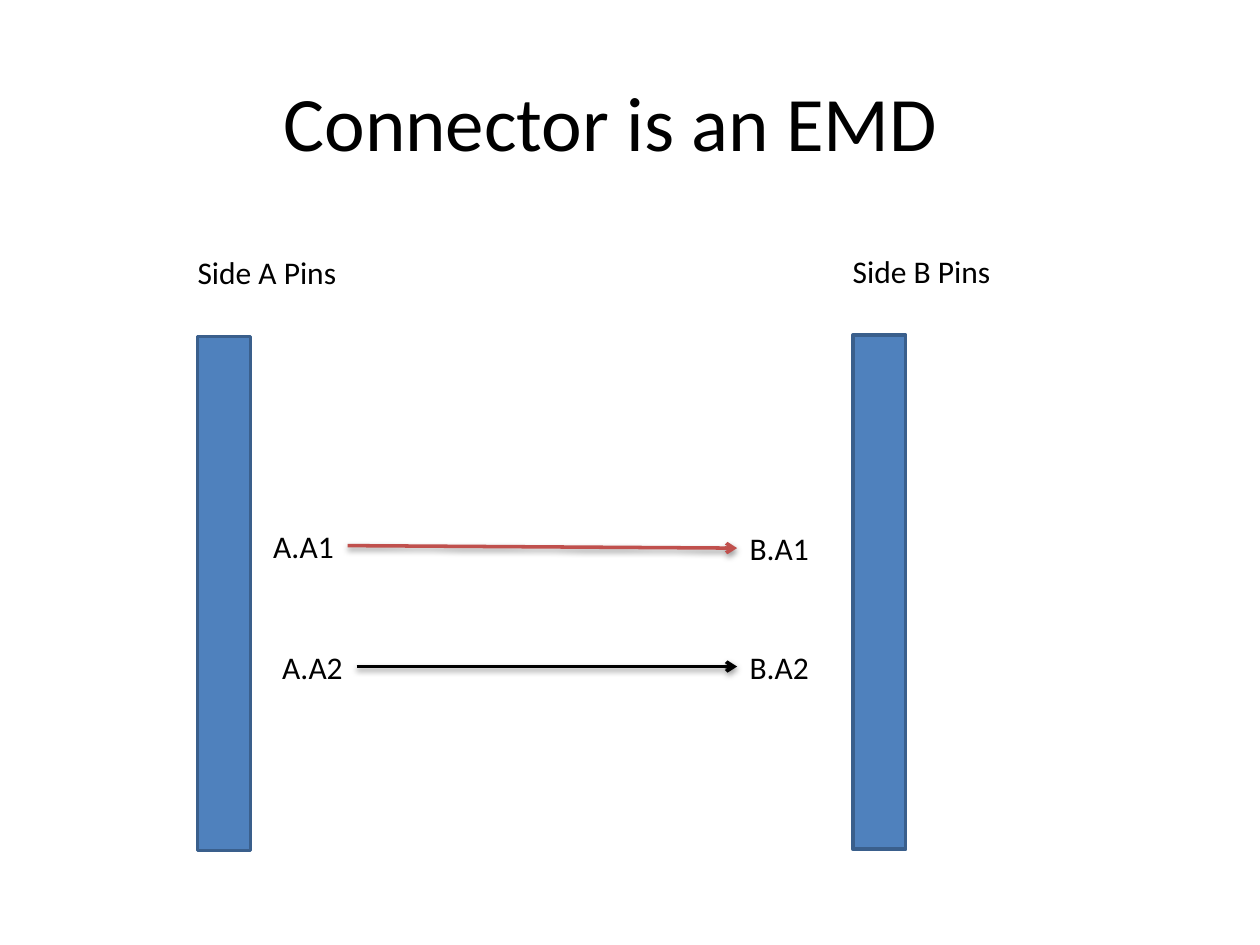
from dataclasses import dataclass

from lxml.etree import SubElement
from pptx import Presentation
from pptx.dml.color import RGBColor
from pptx.enum.shapes import MSO_CONNECTOR, MSO_SHAPE
from pptx.enum.text import MSO_ANCHOR, MSO_AUTO_SIZE, PP_ALIGN
from pptx.oxml import parse_xml
from pptx.oxml.ns import qn
from pptx.util import Pt

SHADOW = (
    '<a:effectLst xmlns:a="http://schemas.openxmlformats.org/drawingml/2006/main">'
    '<a:outerShdw blurRad="39370" dist="20320" dir="5400000" rotWithShape="0">'
    '<a:srgbClr val="000000"><a:alpha val="38000"/></a:srgbClr>'
    '</a:outerShdw></a:effectLst>'
)


@dataclass(frozen=True)
class Theme:
    font: str = "Calibri"
    title_size: int = 44
    label_size: int = 18
    line_width: int = 2
    text: RGBColor = RGBColor(0, 0, 0)
    bar: RGBColor = RGBColor(0x4F, 0x81, 0xBD)
    bar_edge: RGBColor = RGBColor(0x3A, 0x5F, 0x8C)
    accent: RGBColor = RGBColor(0xC0, 0x50, 0x4D)


class Deck:
    """Draws styled elements on the current slide, with lengths in points."""

    def __init__(self, prs, theme):
        self.theme = theme
        self.slide = prs.slides.add_slide(prs.slide_layouts[6])

    def text(self, text, box, size, align=PP_ALIGN.LEFT, **frame):
        sp = self.slide.shapes.add_textbox(*map(Pt, box))
        tf = sp.text_frame
        for name, value in frame.items():
            setattr(tf, name, value)
        p = tf.paragraphs[0]
        p.alignment = align
        r = p.add_run()
        r.text = text
        font = {"name": self.theme.font, "size": Pt(size)}
        for name, value in font.items():
            setattr(r.font, name, value)
        r.font.color.rgb = self.theme.text

    def title(self, text, box):
        self.text(text, box, self.theme.title_size, PP_ALIGN.CENTER,
                  word_wrap=True, vertical_anchor=MSO_ANCHOR.MIDDLE)

    def label(self, text, x, y, width):
        self.text(text, (x, y, width, 28.8), self.theme.label_size,
                  word_wrap=False, auto_size=MSO_AUTO_SIZE.SHAPE_TO_FIT_TEXT)

    def bar(self, x, y, width, height):
        sp = self.slide.shapes.add_shape(
            MSO_SHAPE.RECTANGLE, *map(Pt, (x, y, width, height)))
        sp.shadow.inherit = False
        sp.fill.solid()
        sp.fill.fore_color.rgb = self.theme.bar
        self.outline(sp.line, self.theme.bar_edge)

    def arrow(self, start, end, color):
        sp = self.slide.shapes.add_connector(
            MSO_CONNECTOR.STRAIGHT, *map(Pt, (*start, *end)))
        self.outline(sp.line, color)
        SubElement(sp.line._get_or_add_ln(), qn("a:tailEnd"), type="arrow")
        sp._element.spPr.append(parse_xml(SHADOW))

    def outline(self, line, color):
        line.color.rgb = color
        line.width = Pt(self.theme.line_width)


def main():
    prs = Presentation()
    prs.slide_width, prs.slide_height = Pt(720), Pt(540)
    theme = Theme()
    deck = Deck(prs, theme)

    deck.title("Connector is an EMD ", (30, 24, 648, 90))
    for side, x, y in (("A", 105.8, 141.1), ("B", 480.2, 140.4)):
        deck.label(f"Side {side} Pins", x, y, 95)
        deck.bar(x + 7.2, y + 51.1, 30.2, 293.8)

    b_left = 421.2
    pins = (
        (1, 149, 297.4, 298.8, 198.7, 311.8, 313.2, theme.accent),
        (2, 154.1, 366.5, 366.5, 203.8, 380.9, 380.9, theme.text),
    )
    for pin, a_left, a_top, b_top, start_x, start_y, end_y, color in pins:
        deck.label(f"A.A{pin}", a_left, a_top, 49.7)
        deck.label(f"B.A{pin}", b_left, b_top, 49)
        deck.arrow((start_x, start_y), (b_left, end_y), color)

    prs.save("out.pptx")


if __name__ == "__main__":
    main()
